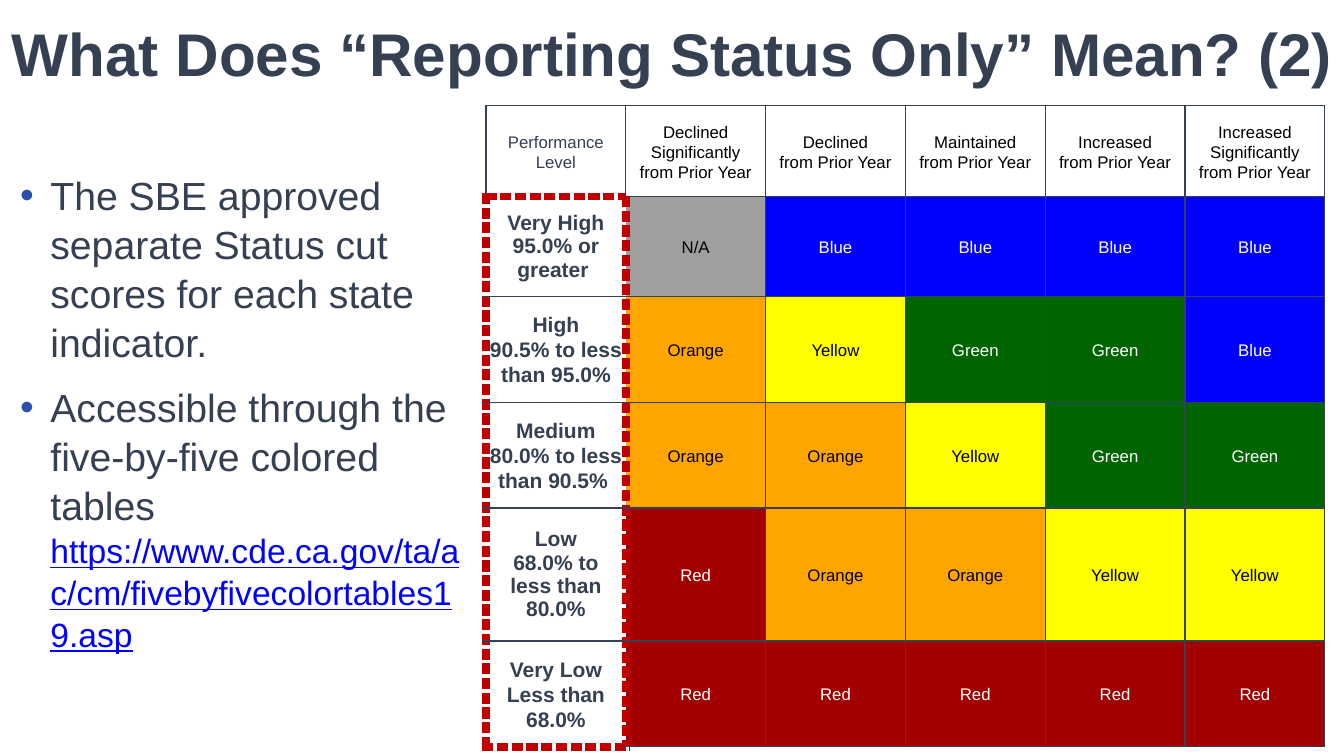
from lxml import etree
from pptx import Presentation
from pptx.dml.color import RGBColor
from pptx.enum.text import MSO_ANCHOR, MSO_AUTO_SIZE, PP_ALIGN
from pptx.oxml.ns import qn
from pptx.util import Inches, Pt

CENTER = PP_ALIGN.CENTER
MIDDLE = MSO_ANCHOR.MIDDLE
TOP = MSO_ANCHOR.TOP
NO_AUTOFIT = MSO_AUTO_SIZE.NONE
FONT = "Arial"

COLORS = {
    "slate": "354052", "bullet": "2B50AC", "link": "0000FF",
    "highlight": "C00000", "black": "000000", "white": "FFFFFF",
    "N/A": "9F9F9F", "Blue": "0000FF", "Green": "006500",
    "Yellow": "FFFF00", "Orange": "FFA500", "Red": "A20000",
}
LIGHT_TEXT = ("Blue", "Green", "Red")

HEADERS = [
    ["Performance Level"],
    ["Declined Significantly", "from Prior Year"],
    ["Declined", "from Prior Year"],
    ["Maintained", "from Prior Year"],
    ["Increased", "from Prior Year"],
    ["Increased Significantly", "from Prior Year"],
]
LEVELS = [
    ["Very High", "95.0% or greater "],
    ["High\n90.5% to less than 95.0%"],
    ["Medium", "80.0% to less than 90.5% "],
    ["Low", "68.0% to less than 80.0%"],
    ["Very Low\nLess than 68.0%"],
]
RATINGS = [
    ["N/A", "Blue", "Blue", "Blue", "Blue"],
    ["Orange", "Yellow", "Green", "Green", "Blue"],
    ["Orange", "Orange", "Yellow", "Green", "Green"],
    ["Red", "Orange", "Orange", "Yellow", "Yellow"],
    ["Red", "Red", "Red", "Red", "Red"],
]
ROW_HEIGHTS = [0.9, 0.99, 1.05, 1.05, 1.32, 1.05]
WIDE_INSET_ROWS = (1, 4)


def add_run(paragraph, text, size, color, bold=False, underline=False):
    run = paragraph.add_run()
    run.text = text
    run.font.name = FONT
    run.font.size = Pt(size)
    run.font.bold = bold
    run.font.underline = underline
    run.font.color.rgb = RGBColor.from_string(COLORS[color])


def add_border(cell, side, highlighted):
    properties = cell._tc.get_or_add_tcPr()
    width = Pt(6) if highlighted else Pt(1)
    line = etree.SubElement(properties, qn(f"a:ln{side}"), w=str(width))
    fill = etree.SubElement(line, qn("a:solidFill"))
    color = COLORS["highlight" if highlighted else "slate"]
    etree.SubElement(fill, qn("a:srgbClr"), val=color)
    dash = "sysDash" if highlighted else "solid"
    etree.SubElement(line, qn("a:prstDash"), val=dash)


presentation = Presentation()
presentation.slide_width = Inches(13.33)
presentation.slide_height = Inches(7.5)
slide = presentation.slides.add_slide(presentation.slide_layouts[1])

title = slide.shapes.title
title.left, title.top = Inches(0), Inches(0)
title.width, title.height = Inches(13.33), Inches(1.05)
title_frame = title.text_frame
title_frame.auto_size = NO_AUTOFIT
title_frame.vertical_anchor = MIDDLE
title_frame.margin_left = title_frame.margin_right = 0
title_paragraph = title_frame.paragraphs[0]
title_paragraph.alignment = CENTER
add_run(title_paragraph, "What Does “Reporting Status Only” Mean? (2)", 43, "slate", bold=True)

body = slide.placeholders[1]
body.left, body.top = Inches(0), Inches(1.63)
body.width, body.height = Inches(4.7), Inches(5.27)
body_frame = body.text_frame
body_frame.auto_size = NO_AUTOFIT
body_frame.vertical_anchor = TOP
bullets = [
    [("The SBE approved separate Status cut scores for each state indicator.", 28, "slate", False)],
    [
        ("Accessible through the five-by-five colored tables ", 28, "slate", False),
        ("https://www.cde.ca.gov/ta/ac/cm/fivebyfivecolortables19.asp", 24, "link", True),
    ],
]
for index, runs in enumerate(bullets):
    paragraph = body_frame.paragraphs[0] if index == 0 else body_frame.add_paragraph()
    paragraph.line_spacing = 1.04
    paragraph.space_before = Pt(6 if index else 0)
    paragraph.space_after = Pt(6)
    properties = paragraph._p.get_or_add_pPr()
    properties.set("marL", str(Inches(0.4)))
    properties.set("indent", str(Inches(-0.3)))
    bullet_color = etree.SubElement(properties, qn("a:buClr"))
    etree.SubElement(bullet_color, qn("a:srgbClr"), val=COLORS["bullet"])
    etree.SubElement(properties, qn("a:buFont"), typeface=FONT)
    etree.SubElement(properties, qn("a:buChar"), char="•")
    for text, size, color, underline in runs:
        add_run(paragraph, text, size, color, underline=underline)

table = slide.shapes.add_table(
    len(ROW_HEIGHTS), len(HEADERS), Inches(4.82), Inches(1.05), Inches(8.32), Inches(sum(ROW_HEIGHTS))
).table
table.first_row = False
table.horz_banding = False
for row, height in zip(table.rows, ROW_HEIGHTS):
    row.height = Inches(height)

last_row = len(ROW_HEIGHTS) - 1
for row in range(len(ROW_HEIGHTS)):
    for column in range(len(HEADERS)):
        cell = table.cell(row, column)
        is_level = row > 0 and column == 0
        is_rating = row > 0 and column > 0
        wide_inset = is_level and row in WIDE_INSET_ROWS

        add_border(cell, "L", row > 0 and column <= 1)
        add_border(cell, "R", is_level)
        add_border(cell, "T", column == 0 and row == 1)
        add_border(cell, "B", column == 0 and row in (0, last_row))

        size, color = 12, "black"
        if is_rating:
            rating = RATINGS[row - 1][column - 1]
            texts = [rating]
            color = "white" if rating in LIGHT_TEXT else "black"
            cell.fill.solid()
            cell.fill.fore_color.rgb = RGBColor.from_string(COLORS[rating])
        else:
            texts = LEVELS[row - 1] if is_level else HEADERS[column]
            cell.fill.background()
            if column == 0:
                color = "slate"
            if is_level:
                size = 15

        cell.vertical_anchor = MIDDLE
        cell.margin_left = cell.margin_right = Inches(0.12 if wide_inset else 0.03)
        cell.margin_top = Inches(0 if wide_inset else 0.01)
        cell.margin_bottom = 0
        for index, text in enumerate(texts):
            frame = cell.text_frame
            paragraph = frame.paragraphs[0] if index == 0 else frame.add_paragraph()
            paragraph.alignment = CENTER
            paragraph.line_spacing = 1.0 if wide_inset else 1.07
            for line_index, line_text in enumerate(text.split("\n")):
                if line_index:
                    paragraph.add_line_break()
                add_run(paragraph, line_text, size, color, bold=is_level)

presentation.save("out.pptx")
